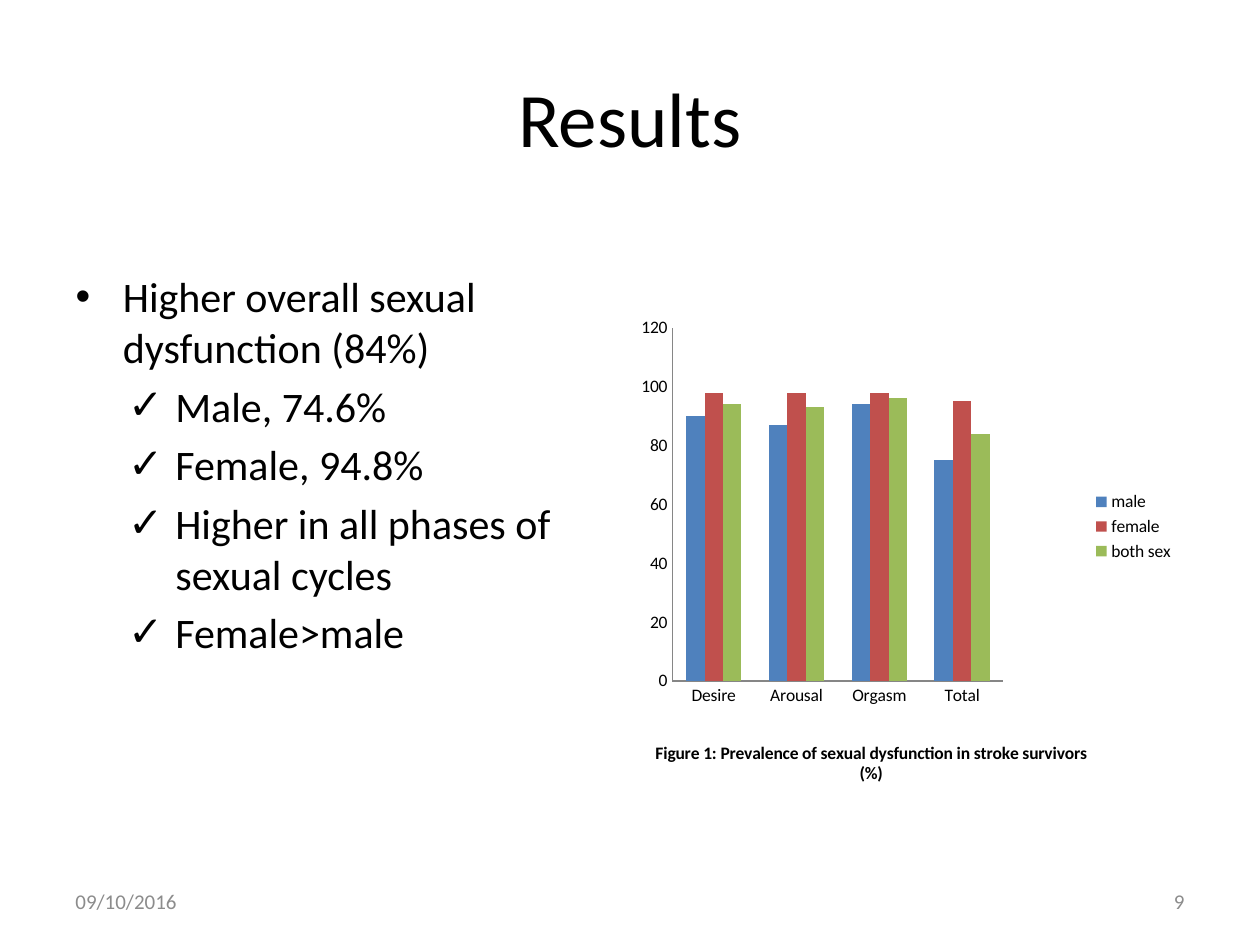
from dataclasses import dataclass

from lxml import etree
from pptx import Presentation
from pptx import util as u
from pptx.chart import data as cd
from pptx.dml.color import RGBColor
from pptx.enum import chart as ch, text as tx
from pptx.oxml import ns


@dataclass(frozen=True)
class Theme:
    font: str = "Calibri"
    ink: str = "000000"
    grey: str = "8C8C8C"
    axis: str = "868686"
    bars: tuple = ("4F81BD", "C0504D", "9BBB59")
    head: int = 44
    body: int = 24
    foot: int = 12
    small: int = 10


def rgb(code):
    return RGBColor.from_string(code)


def style(font, theme, size, color=None, bold=False):
    font.name, font.size, font.bold = theme.font, u.Pt(size), bold
    font.color.rgb = rgb(color or theme.ink)


def write(para, words, theme, size, color=None, bold=False, align=None):
    """Add one formatted run to a paragraph."""
    run = para.add_run()
    run.text = words
    style(run.font, theme, size, color, bold)
    para.alignment = align


def bullet(para, mark, left, hang):
    props = para._p.get_or_add_pPr()
    props.set("marL", str(u.Pt(left)))
    props.set("indent", str(-u.Pt(hang)))
    space = etree.SubElement(props, ns.qn("a:spcBef"))
    etree.SubElement(space, ns.qn("a:spcPct")).set("val", "20000")
    etree.SubElement(props, ns.qn("a:buFont")).set("typeface", "Arial")
    etree.SubElement(props, ns.qn("a:buChar")).set("char", mark)


def layout(parent, index, **parts):
    """Fix the place of a chart part, in fractions of the chart."""
    old = parent.find(ns.qn("c:layout"))
    if old is not None:
        parent.remove(old)
    node = etree.Element(ns.qn("c:layout"))
    parent.insert(index, node)
    manual = etree.SubElement(node, ns.qn("c:manualLayout"))
    for tag, val in parts.items():
        etree.SubElement(manual, ns.qn(f"c:{tag}")).set("val", str(val))


class Deck:
    def __init__(self, theme):
        self.theme = theme
        self.file = Presentation()
        self.file.slide_width, self.file.slide_height = u.Pt(720), u.Pt(540)
        self.slide = self.file.slides.add_slide(self.file.slide_layouts[1])

    def place(self, shape, box):
        shape.left, shape.top, shape.width, shape.height = map(u.Pt, box)
        frame = shape.text_frame
        frame.word_wrap = True
        frame.auto_size = tx.MSO_AUTO_SIZE.NONE
        return frame

    def title(self, words, box):
        frame = self.place(self.slide.shapes.title, box)
        frame.vertical_anchor = tx.MSO_ANCHOR.MIDDLE
        write(frame.paragraphs[0], words, self.theme, self.theme.head,
              align=tx.PP_ALIGN.CENTER)

    def points(self, items, box):
        frame = self.place(self.slide.placeholders[1], box)
        for i, (level, words) in enumerate(items):
            para = frame.add_paragraph() if i else frame.paragraphs[0]
            mark, left = (("•", 27), ("✓", 57))[level]
            para.level = level
            bullet(para, mark, left, 27)
            write(para, words, self.theme, self.theme.body)

    def footer(self, words, box, align):
        shape = self.slide.shapes.add_textbox(*map(u.Pt, box))
        frame = self.place(shape, box)
        frame.vertical_anchor = tx.MSO_ANCHOR.MIDDLE
        write(frame.paragraphs[0], words, self.theme, self.theme.foot,
              self.theme.grey, align=align)

    def columns(self, name, cats, rows, box):
        data = cd.CategoryChartData()
        data.categories = cats
        for label, vals in rows.items():
            data.add_series(label, vals)
        chart = self.slide.shapes.add_chart(
            ch.XL_CHART_TYPE.COLUMN_CLUSTERED, *map(u.Pt, box), data).chart
        style(chart.font, self.theme, self.theme.small)

        # Columns
        plot = chart.plots[0]
        plot.vary_by_categories = False
        plot.gap_width, plot.overlap = 150, 0
        for series, color in zip(plot.series, self.theme.bars):
            series.format.fill.solid()
            series.format.fill.fore_color.rgb = rgb(color)

        # Axes
        for axis in (chart.category_axis, chart.value_axis):
            axis.has_major_gridlines = False
            axis.major_tick_mark = axis.minor_tick_mark = ch.XL_TICK_MARK.NONE
            axis.format.line.color.rgb = rgb(self.theme.axis)
        scale = chart.value_axis
        scale.minimum_scale, scale.maximum_scale, scale.major_unit = 0, 120, 20

        # Legend and caption
        chart.has_legend = True
        chart.legend.position = ch.XL_LEGEND_POSITION.RIGHT
        chart.legend.include_in_layout = False
        chart.has_title = True
        write(chart.chart_title.text_frame.paragraphs[0], name, self.theme,
              self.theme.small, bold=True, align=tx.PP_ALIGN.CENTER)
        layout(chart.chart_title._element, 1,
               xMode="edge", yMode="edge", x=0.04, y=0.89)
        area = chart._chartSpace.find(".//" + ns.qn("c:plotArea"))
        layout(area, 0, layoutTarget="inner", xMode="edge", yMode="edge",
               x=0.076, y=0.135, w=0.595, h=0.649)


def main():
    deck = Deck(Theme())

    # Title and findings
    deck.title("Results", (36, 21.6, 648, 90))
    deck.points([
        (0, "Higher overall sexual dysfunction (84%)"),
        (1, "Male, 74.6%"),
        (1, "Female, 94.8%"),
        (1, "Higher in all phases of sexual cycles"),
        (1, "Female>male"),
    ], (36, 151.2, 301.7, 294.5))

    # Date and slide number
    deck.footer("09/10/2016", (36, 500.5, 168, 28.75), tx.PP_ALIGN.LEFT)
    deck.footer("9", (516, 500.5, 168, 28.75), tx.PP_ALIGN.RIGHT)

    # Prevalence chart
    deck.columns(
        "Figure 1: Prevalence of sexual dysfunction in stroke survivors (%)",
        ["Desire", "Arousal", "Orgasm", "Total"],
        {"male": (90, 87, 94, 75),
         "female": (98, 98, 98, 95),
         "both sex": (94, 93, 96, 84)},
        (360, 145.4, 318.2, 311))

    deck.file.save("out.pptx")


if __name__ == "__main__":
    main()
